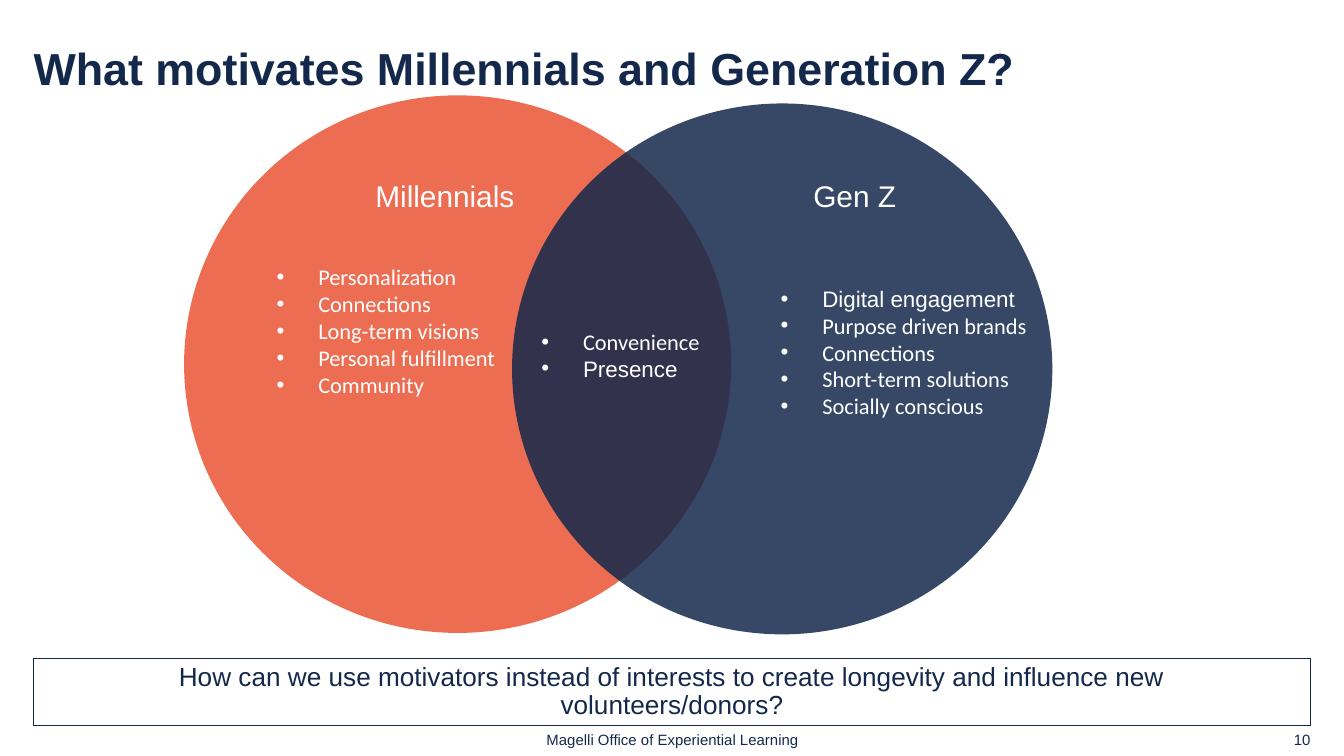
from lxml.etree import SubElement
from pptx import Presentation
from pptx.dml.color import RGBColor
from pptx.enum.shapes import MSO_SHAPE as Shape
from pptx.enum.text import MSO_ANCHOR as Anchor, PP_ALIGN as Align
from pptx.oxml.ns import qn
from pptx.util import Inches, Pt

COLORS = {"navy": "13284B", "orange": "E84927", "white": "FFFFFF"}


def add_text(area, runs, size, color, align=Align.LEFT, spacing=1.0,
             bold=False, anchor=Anchor.MIDDLE, insets=(0, 0, 0, 0)):
    box = page.shapes.add_textbox(*map(Inches, area))
    frame = box.text_frame
    frame.word_wrap = True
    frame.vertical_anchor = anchor
    (frame.margin_left, frame.margin_top,
     frame.margin_right, frame.margin_bottom) = map(Inches, insets)
    for index, (text, font) in enumerate(runs):
        para = frame.paragraphs[0] if index == 0 else frame.add_paragraph()
        para.alignment = align
        para.line_spacing = spacing
        span = para.add_run()
        span.text = text
        span.font.name = font
        span.font.size = Pt(size)
        span.font.bold = bold
        span.font.color.rgb = RGBColor.from_string(COLORS[color])
    return box


deck = Presentation()
deck.slide_width = Inches(10)
deck.slide_height = Inches(10 * 9 / 16)
page = deck.slides.add_slide(deck.slide_layouts[6])

add_text((4.03, 5.4, 1.95, 0.2),
         [("Magelli Office of Experiential Learning", "Arial")],
         8, "navy", Align.CENTER)

question = add_text(
    (0.25, 4.9, 9.5, 0.5),
    [("How can we use motivators instead of interests to create longevity "
      "and influence new volunteers/donors?", "Arial")],
    14, "navy", Align.CENTER, 0.9, insets=(0.5, 0.1, 0.5, 0.1))
question.line.color.rgb = RGBColor.from_string(COLORS["navy"])
question.line.width = Pt(0.75)

add_text((0.25, 0.23, 9.5, 0.6),
         [("What motivates Millennials and Generation Z?", "Arial")],
         24, "navy", spacing=0.9, bold=True, insets=(0, 0, 1.2, 0))

circles = [
    ((1.37, 0.71, 4.07, 4), "orange", 80),
    ((3.81, 0.77, 4.02, 3.95), "navy", 85),
]
for area, color, opacity in circles:
    circle = page.shapes.add_shape(Shape.OVAL, *map(Inches, area))
    circle.shadow.inherit = False
    circle.line.fill.background()
    circle.fill.solid()
    circle.fill.fore_color.rgb = RGBColor.from_string(COLORS[color])
    tint = circle._element.spPr.find(qn("a:solidFill"))[0]
    SubElement(tint, qn("a:alpha"), val=str(opacity * 1000))

headings = [("Millennials", 2.5, 1.62), ("Gen Z", 5.54, 1.64)]
for heading, left, width in headings:
    add_text((left, 1.29, width, 0.36), [(heading, "Arial")], 16, "white",
             Align.CENTER, 0.95, anchor=Anchor.TOP,
             insets=(0.1, 0.05, 0.1, 0.05))

motivators = [
    ((5.71, 2.02, 2.72, 1.41),
     [("Digital engagement", "Arial"), ("Purpose driven brands", "Calibri"),
      ("Connections", "Calibri"), ("Short-term solutions", "Calibri"),
      ("Socially conscious", "Calibri")]),
    ((3.93, 2.34, 1.49, 1.68),
     [("Convenience", "Calibri"), ("Presence", "Arial")]),
    ((1.96, 1.86, 2.72, 1.65),
     [("Personalization", "Calibri"), ("Connections", "Calibri"),
      ("Long-term visions", "Calibri"), ("Personal fulfillment", "Calibri"),
      ("Community", "Calibri")]),
]
for area, items in motivators:
    box = add_text(area, items, 12, "white", anchor=Anchor.TOP,
                   insets=(0.1, 0.1, 0.1, 0.1))
    for para in box.text_frame.paragraphs:
        layout = para._p.get_or_add_pPr()
        layout.set("marL", str(Inches(0.31)))
        layout.set("indent", str(-Inches(0.31)))
        SubElement(layout, qn("a:buFont"), typeface="Arial")
        SubElement(layout, qn("a:buChar"), char="•")

add_text((7.5, 5.4, 2.25, 0.2), [("10", "Arial")], 8, "navy", Align.RIGHT)

deck.save("out.pptx")
